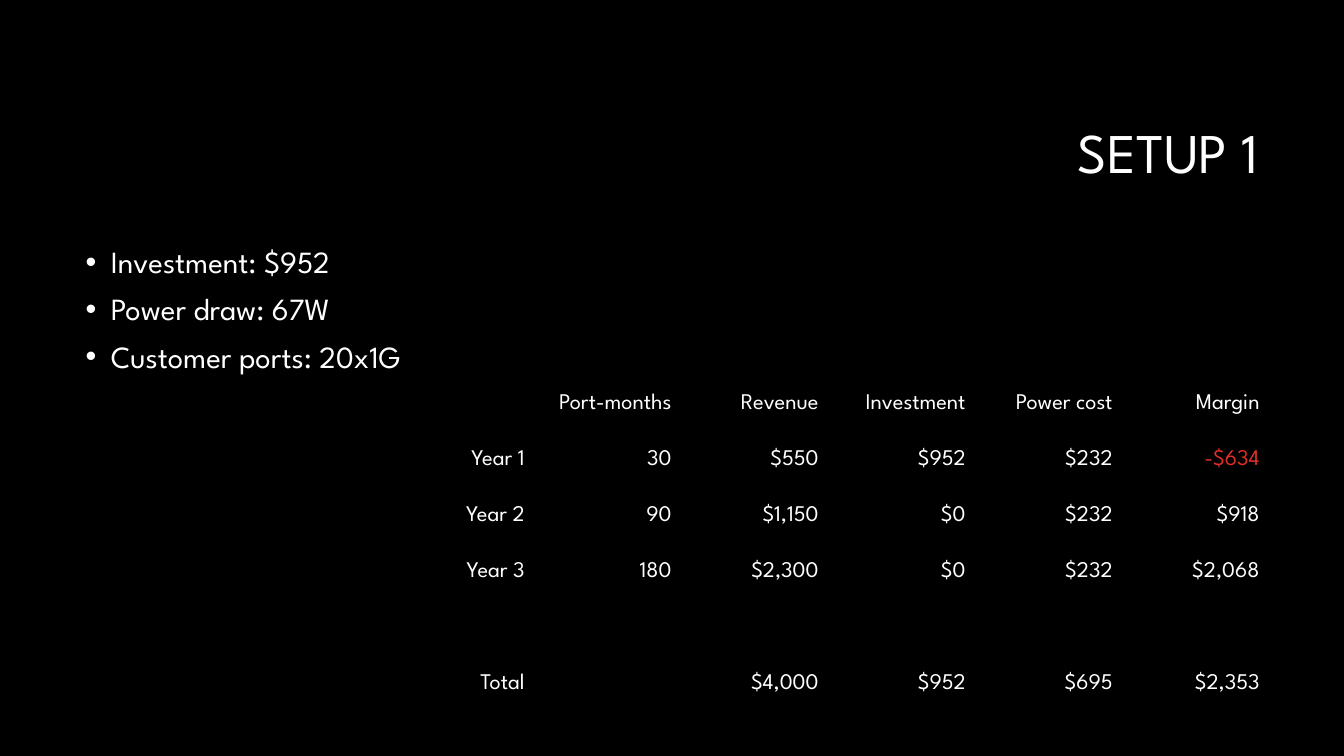
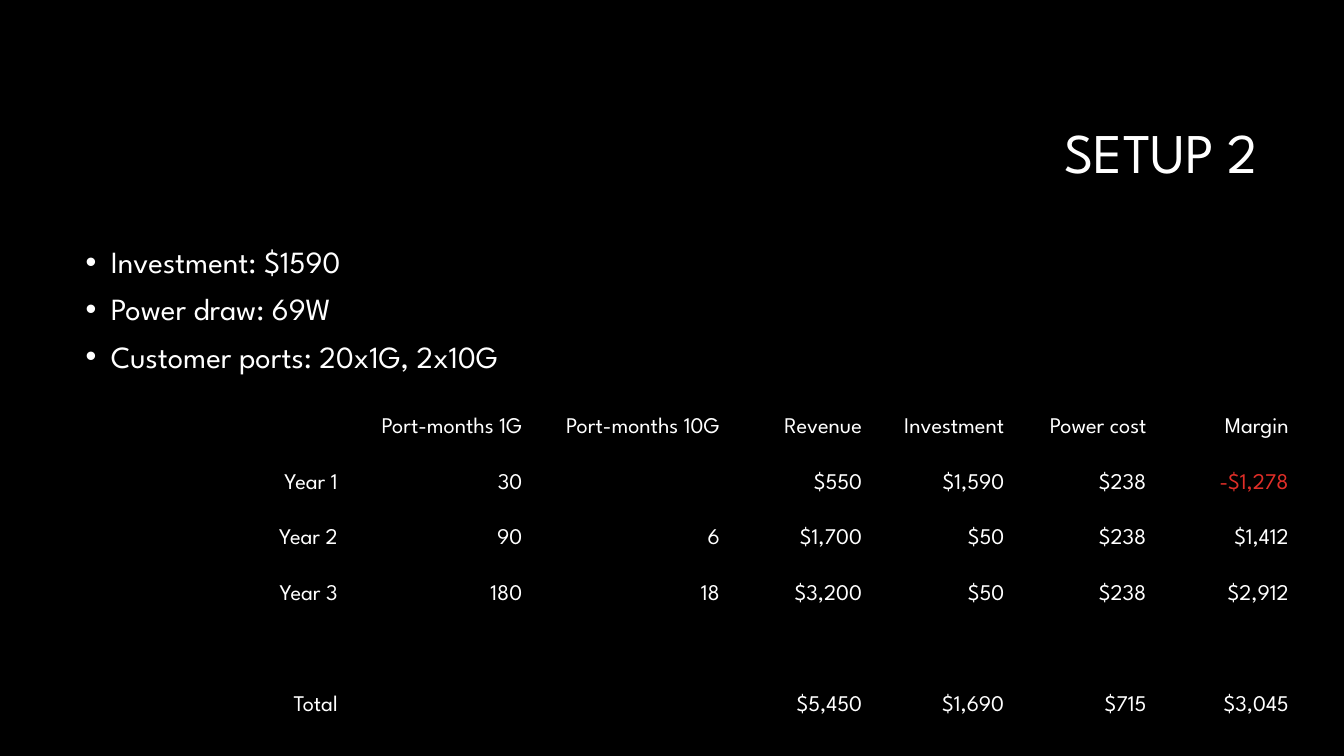
from dataclasses import dataclass

from pptx import Presentation
from pptx.dml.color import RGBColor
from pptx.enum.text import MSO_ANCHOR, MSO_AUTO_SIZE, PP_ALIGN
from pptx.oxml.ns import qn
from pptx.presentation import Presentation as Deck
from pptx.shapes.placeholder import SlidePlaceholder
from pptx.slide import Slide
from pptx.util import Pt
from lxml.etree import SubElement

# Shared look
BLACK = RGBColor(0x00, 0x00, 0x00)
WHITE = RGBColor(0xFF, 0xFF, 0xFF)
RED = RGBColor(0xDF, 0x2E, 0x28)
FONT = "League Spartan"
PLAIN_TABLE_STYLE = "{2D5ABB26-0587-4C30-8999-92F81FD0307C}"

# Left, top, width, height in points
TITLE_AREA = (228, 60.5, 678, 101.5)
LIST_AREA = (54, 172.8, 852, 114.5)

CELL_FORMAT = {
    "vertical_anchor": MSO_ANCHOR.BOTTOM,
    "margin_left": Pt(0.75),
    "margin_right": Pt(0.75),
    "margin_top": Pt(0.75),
    "margin_bottom": Pt(0),
}
TABLE_FORMAT = {"first_row": False, "horz_banding": False}


@dataclass(frozen=True)
class CostTable:
    left: float
    top: float
    columns: list[float]
    heights: list[float]
    rows: list[list[str]]


@dataclass(frozen=True)
class Setup:
    title: str
    facts: list[str]
    table: CostTable


SETUPS = [
    Setup(
        "SETUP 1",
        ["Investment: $952", "Power draw: 67W", "Customer ports: 20x1G"],
        CostTable(232.5, 256.3, [143] + [105] * 5, [40] * 6, [
            ["", "Port-months", "Revenue", "Investment", "Power cost", "Margin"],
            ["Year 1", "30", "$550", "$952", "$232", "-$634"],
            ["Year 2", "90", "$1,150", "$0", "$232", "$918"],
            ["Year 3", "180", "$2,300", "$0", "$232", "$2,068"],
            [""] * 6,
            ["Total", "", "$4,000", "$952", "$695", "$2,353"],
        ]),
    ),
    Setup(
        "SETUP 2",
        ["Investment: $1590", "Power draw: 69W", "Customer ports: 20x1G, 2x10G"],
        CostTable(103, 239.8, [139, 131.8, 141.1] + [101.6] * 4, [73.5] + [39.7] * 5, [
            ["", "Port-months 1G", "Port-months 10G", "Revenue", "Investment",
             "Power cost", "Margin"],
            ["Year 1", "30", "", "$550", "$1,590", "$238", "-$1,278"],
            ["Year 2", "90", "6", "$1,700", "$50", "$238", "$1,412"],
            ["Year 3", "180", "18", "$3,200", "$50", "$238", "$2,912"],
            [""] * 7,
            ["Total", "", "", "$5,450", "$1,690", "$715", "$3,045"],
        ]),
    ),
]


def apply_format(target: object, values: dict) -> None:
    for name, value in values.items():
        setattr(target, name, value)


def style_paragraph(paragraph, size: float, color: RGBColor = WHITE, **values) -> None:
    apply_format(paragraph, values)
    apply_format(paragraph.font, {"name": FONT, "size": Pt(size), "bold": False})
    paragraph.font.color.rgb = color


def place(box: SlidePlaceholder, area: tuple, anchor: MSO_ANCHOR) -> None:
    for name, value in zip(("left", "top", "width", "height"), area):
        setattr(box, name, Pt(value))
    apply_format(box.text_frame, {
        "word_wrap": True,
        "auto_size": MSO_AUTO_SIZE.NONE,
        "vertical_anchor": anchor,
    })


def add_title(page: Slide, title: str) -> None:
    box = page.shapes.title
    place(box, TITLE_AREA, MSO_ANCHOR.MIDDLE)
    box.text_frame.text = title
    style_paragraph(box.text_frame.paragraphs[0], 40,
                    alignment=PP_ALIGN.RIGHT, line_spacing=0.9)


def add_facts(page: Slide, facts: list[str]) -> None:
    box = page.placeholders[1]
    place(box, LIST_AREA, MSO_ANCHOR.TOP)
    box.text_frame.text = "\n".join(facts)
    for index, paragraph in enumerate(box.text_frame.paragraphs):
        # Round bullet with a hanging indent
        properties = paragraph._p.get_or_add_pPr()
        properties.set("marL", str(Pt(18)))
        properties.set("indent", str(-Pt(18)))
        SubElement(properties, qn("a:buFont")).set("typeface", "Arial")
        SubElement(properties, qn("a:buChar")).set("char", "•")
        style_paragraph(paragraph, 22, line_spacing=0.9,
                        space_before=Pt(10 if index else 0))


def add_cost_table(page: Slide, costs: CostTable) -> None:
    frame = page.shapes.add_table(
        len(costs.rows), len(costs.columns), Pt(costs.left), Pt(costs.top),
        Pt(sum(costs.columns)), Pt(sum(costs.heights)))
    table = frame.table
    apply_format(table, TABLE_FORMAT)
    for style in frame.element.iter(qn("a:tableStyleId")):
        style.text = PLAIN_TABLE_STYLE
    for column, width in zip(table.columns, costs.columns):
        column.width = Pt(width)
    for row, height, values in zip(table.rows, costs.heights, costs.rows):
        row.height = Pt(height)
        for cell, value in zip(row.cells, values):
            cell.fill.background()
            apply_format(cell, CELL_FORMAT)
            cell.text = value
            # Losses stand out in red
            color = RED if value.startswith("-") else WHITE
            style_paragraph(cell.text_frame.paragraphs[0], 16, color,
                            alignment=PP_ALIGN.RIGHT)


def add_setup(deck: Deck, setup: Setup) -> None:
    page = deck.slides.add_slide(deck.slide_layouts[1])
    add_title(page, setup.title)
    add_facts(page, setup.facts)
    add_cost_table(page, setup.table)


def main() -> None:
    deck = Presentation()
    deck.slide_width, deck.slide_height = Pt(960), Pt(540)
    # Black background for every slide
    background = deck.slide_master.background.fill
    background.solid()
    background.fore_color.rgb = BLACK
    for setup in SETUPS:
        add_setup(deck, setup)
    deck.save("out.pptx")


if __name__ == "__main__":
    main()
